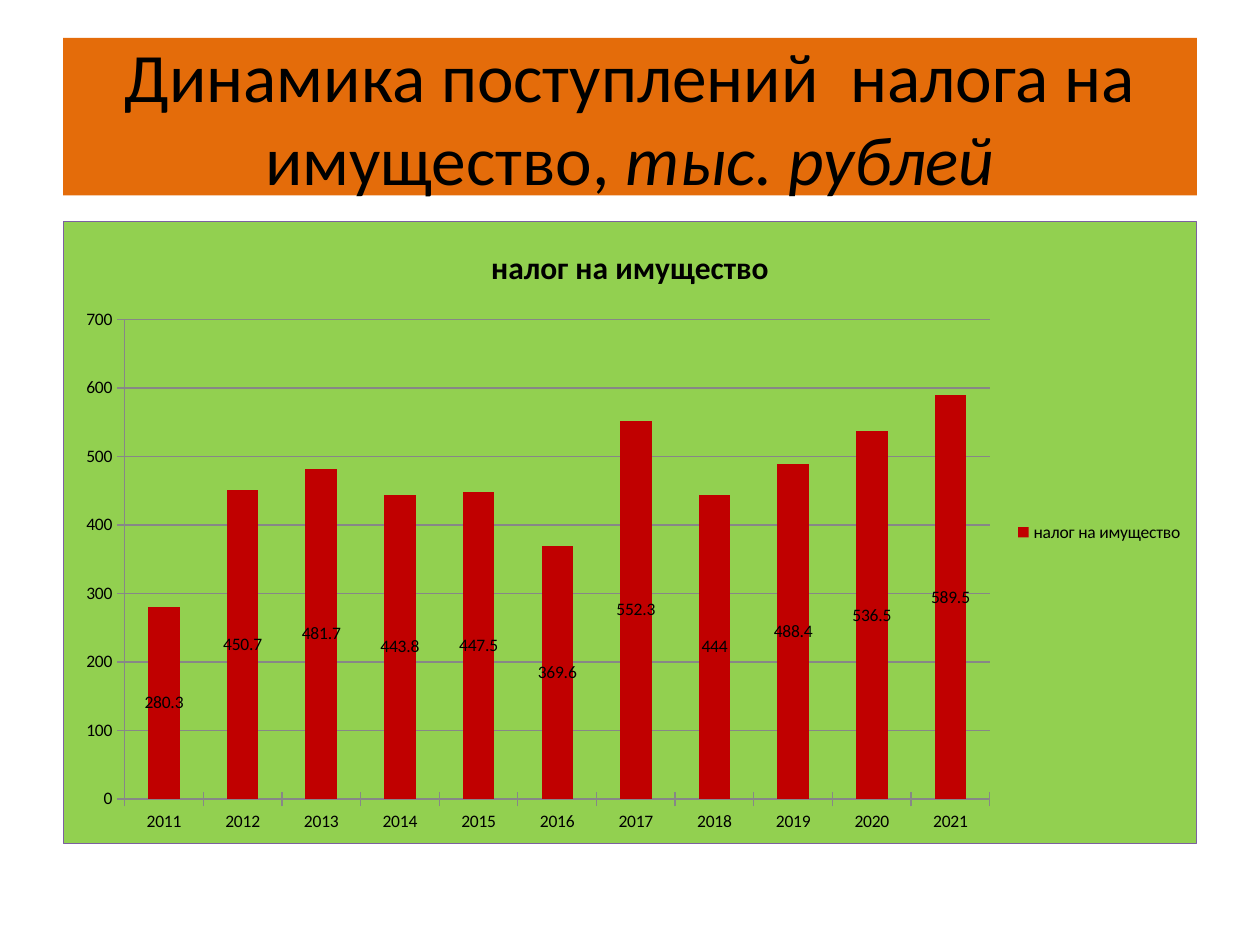
from lxml import etree
from pptx import Presentation
from pptx.chart.data import CategoryChartData
from pptx.dml.color import RGBColor
from pptx.enum.chart import XL_CHART_TYPE, XL_LABEL_POSITION, XL_LEGEND_POSITION, XL_TICK_MARK
from pptx.enum.text import MSO_ANCHOR, MSO_AUTO_SIZE, PP_ALIGN
from pptx.oxml import parse_xml
from pptx.oxml.ns import nsdecls, qn
from pptx.util import Inches, Pt

STACKED = XL_CHART_TYPE.COLUMN_STACKED
MIDDLE = XL_LABEL_POSITION.CENTER
RIGHT = XL_LEGEND_POSITION.RIGHT
CROSS = XL_TICK_MARK.CROSS

FONT = "Calibri"
BLACK, GREY = "000000", "878787"
LEFT, WIDTH = 0.5, 9
NAME = "налог на имущество"
YEARS = [str(year) for year in range(2011, 2022)]
SUMS = [280.3, 450.7, 481.7, 443.8, 447.5, 369.6, 552.3, 444, 488.4, 536.5, 589.5]


def color(code):
    return RGBColor.from_string(code)


def style(font, size, bold=False, italic=False):
    font.name, font.size = FONT, Pt(size)
    font.bold, font.italic = bold, italic
    font.color.rgb = color(BLACK)


def add_title(slide, runs):
    title = slide.shapes.title
    title.left, title.top = Inches(LEFT), Inches(0.3)
    title.width, title.height = Inches(WIDTH), Inches(1.25)
    title.fill.solid()
    title.fill.fore_color.rgb = color("E46C0A")
    frame = title.text_frame
    frame.auto_size = MSO_AUTO_SIZE.NONE
    frame.word_wrap = True
    frame.vertical_anchor = MSO_ANCHOR.MIDDLE
    para = frame.paragraphs[0]
    para.alignment = PP_ALIGN.CENTER
    for text, italic in runs:
        run = para.add_run()
        run.text = text
        style(run.font, 39.6, italic=italic)


def fill_chart(chart, fill, edge, width):
    """Give the whole chart area a fill and a border."""
    props = parse_xml(
        f'<c:spPr {nsdecls("c", "a")}>'
        f'<a:solidFill><a:srgbClr val="{fill}"/></a:solidFill>'
        f'<a:ln w="{Pt(width)}"><a:solidFill><a:srgbClr val="{edge}"/>'
        '</a:solidFill></a:ln></c:spPr>')
    root = chart.element
    root.find(qn("c:chart")).addnext(props)
    if root.find(qn("c:roundedCorners")) is None:
        corners = etree.Element(qn("c:roundedCorners"), val="0")
        root.find(qn("c:chart")).addprevious(corners)


def style_axis(axis, grid):
    axis.major_tick_mark = CROSS
    axis.minor_tick_mark = XL_TICK_MARK.NONE
    axis.has_major_gridlines = grid
    lines = [axis.format.line]
    if grid:
        lines.append(axis.major_gridlines.format.line)
    for line in lines:
        line.width = Pt(0.75)
        line.color.rgb = color(GREY)


def add_chart(slide):
    data = CategoryChartData()
    data.categories = YEARS
    data.add_series(NAME, SUMS)
    chart = slide.shapes.add_chart(
        STACKED, Inches(LEFT), Inches(1.75), Inches(WIDTH), Inches(4.95), data).chart
    style(chart.font, 10)
    fill_chart(chart, "92D050", "7D60A0", 0.75)

    chart.has_title = True
    run = chart.chart_title.text_frame.paragraphs[0].add_run()
    run.text = NAME
    style(run.font, 18, bold=True)
    chart.chart_title.include_in_layout = False

    chart.has_legend = True
    chart.legend.position = RIGHT
    chart.legend.include_in_layout = False

    style_axis(chart.category_axis, False)
    style_axis(chart.value_axis, True)

    plot = chart.plots[0]
    plot.gap_width, plot.overlap = 150, 100
    plot.vary_by_categories = False
    bars = plot.series[0]
    bars.format.fill.solid()
    bars.format.fill.fore_color.rgb = color("C00000")
    labels = bars.data_labels
    labels.show_value = True
    labels.position = MIDDLE
    style(labels.font, 10)


def main():
    deck = Presentation()
    deck.slide_width, deck.slide_height = Inches(10), Inches(7.5)
    slide = deck.slides.add_slide(deck.slide_layouts[5])
    add_title(slide, [("Динамика поступлений  налога на имущество, ", False),
                      ("тыс. рублей", True)])
    add_chart(slide)
    deck.save("out.pptx")


if __name__ == "__main__":
    main()
